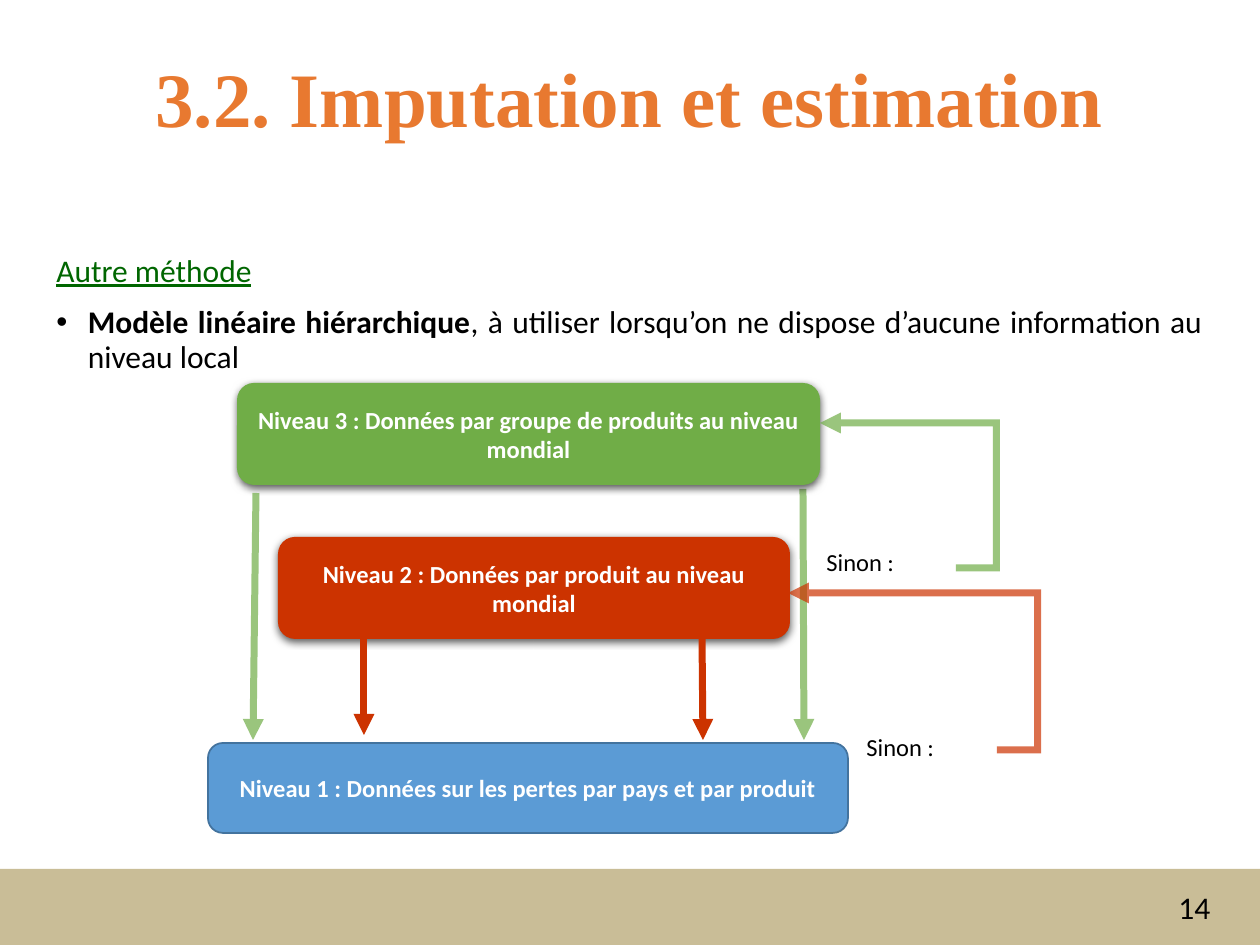
"""Build the slide on imputation with the hierarchical linear model."""
from dataclasses import dataclass
from typing import Optional

from lxml import etree
from pptx import Presentation
from pptx.dml.color import RGBColor
from pptx.enum.shapes import MSO_CONNECTOR, MSO_SHAPE
from pptx.enum.text import MSO_ANCHOR, PP_ALIGN
from pptx.oxml.ns import qn
from pptx.util import Emu, Pt

RECTANGLE, ROUNDED = MSO_SHAPE.RECTANGLE, MSO_SHAPE.ROUNDED_RECTANGLE
STRAIGHT, ELBOW = MSO_CONNECTOR.STRAIGHT, MSO_CONNECTOR.ELBOW
TOP, MIDDLE = MSO_ANCHOR.TOP, MSO_ANCHOR.MIDDLE
LEFT, CENTER, JUSTIFY = PP_ALIGN.LEFT, PP_ALIGN.CENTER, PP_ALIGN.JUSTIFY
EMU_PER_PX = 914400 / 126


@dataclass(frozen=True)
class Theme:
    heading_font: str = "Times New Roman"
    body_font: str = "Calibri"
    title_size: int = 44
    body_size: int = 18
    diagram_size: int = 14
    title: str = "E87930"
    method: str = "006600"
    ink: str = "000000"
    paper: str = "FFFFFF"
    band: str = "C9BD97"
    green: str = "70AD47"
    red: str = "CC3300"
    blue: str = "5B9BD5"
    blue_edge: str = "43739E"
    arrow_width: int = 4
    arrow_opacity: int = 70


THEME = Theme()


@dataclass(frozen=True)
class Box:
    left: int
    top: int
    width: int
    height: int


@dataclass(frozen=True)
class Level:
    box: Box
    text: str
    fill: str
    edge: Optional[str] = None


@dataclass(frozen=True)
class Arrow:
    start: tuple[int, int]
    end: tuple[int, int]
    color: str
    opacity: int = 100
    bend: Optional[float] = None


@dataclass(frozen=True)
class Label:
    box: Box
    text: str


LEVELS = (
    Level(Box(208, 743, 640, 90), "Niveau 1 : Données sur les pertes par pays et par produit",
          THEME.blue, THEME.blue_edge),
    Level(Box(237, 383, 583, 102), "Niveau 3 : Données par groupe de produits au niveau mondial",
          THEME.green),
    Level(Box(278, 537, 512, 102), "Niveau 2 : Données par produit au niveau mondial",
          THEME.red),
)
BACK_ARROW = Arrow((803, 489), (804, 740), THEME.green, THEME.arrow_opacity)
FRONT_ARROWS = (
    Arrow((364, 638), (364, 735), THEME.red),
    Arrow((702, 633), (703, 740), THEME.red),
    Arrow((256, 493), (253, 740), THEME.green, THEME.arrow_opacity),
    Arrow((956, 568), (820, 423), THEME.green, THEME.arrow_opacity, -0.297),
    Arrow((997, 750), (788, 593), THEME.red, THEME.arrow_opacity, -0.195),
)
LABELS = (
    Label(Box(814, 541, 319, 82), "Sinon :"),
    Label(Box(854, 726, 319, 82), "Sinon :"),
)


def px(length: int) -> Emu:
    return Emu(round(length * EMU_PER_PX))


def place(box: Box) -> tuple[Emu, Emu, Emu, Emu]:
    return px(box.left), px(box.top), px(box.width), px(box.height)


def add_run(paragraph, text: str, size: int, color: str, bold: bool = False,
            underline: bool = False, font: str = THEME.body_font) -> None:
    run = paragraph.add_run()
    run.text = text
    run.font.name = font
    run.font.size = Pt(size)
    run.font.bold = bold
    run.font.underline = underline
    run.font.color.rgb = RGBColor.from_string(color)


def add_text_frame(slide, box: Box, anchor=TOP):
    frame = slide.shapes.add_textbox(*place(box)).text_frame
    frame.word_wrap = True
    frame.vertical_anchor = anchor
    return frame


def add_panel(slide, kind, box: Box, fill: str, edge: Optional[str] = None):
    panel = slide.shapes.add_shape(kind, *place(box))
    panel.shadow.inherit = False
    panel.fill.solid()
    panel.fill.fore_color.rgb = RGBColor.from_string(fill)
    if edge:
        panel.line.color.rgb = RGBColor.from_string(edge)
        panel.line.width = Pt(1)
    else:
        panel.line.fill.background()
    return panel


def add_drop_shadow(panel) -> None:
    effects = panel.element.spPr.find(qn("a:effectLst"))
    shadow = etree.SubElement(effects, qn("a:outerShdw"), blurRad=str(Pt(4.5)),
                              dist=str(Pt(1.5)), dir="5400000", rotWithShape="0")
    color = etree.SubElement(shadow, qn("a:srgbClr"), val=THEME.ink)
    etree.SubElement(color, qn("a:alpha"), val="63000")


def add_level(slide, level: Level) -> None:
    panel = add_panel(slide, ROUNDED, level.box, level.fill, level.edge)
    if level.edge is None:
        add_drop_shadow(panel)
    frame = panel.text_frame
    frame.word_wrap = True
    frame.vertical_anchor = MIDDLE
    caption = frame.paragraphs[0]
    caption.alignment = CENTER
    add_run(caption, level.text, THEME.diagram_size, THEME.paper, bold=True)


def add_arrow(slide, arrow: Arrow) -> None:
    kind = STRAIGHT if arrow.bend is None else ELBOW
    connector = slide.shapes.add_connector(kind, *map(px, arrow.start + arrow.end))
    connector.line.width = Pt(THEME.arrow_width)
    connector.line.color.rgb = RGBColor.from_string(arrow.color)
    properties = connector.element.spPr
    line = properties.find(qn("a:ln"))
    if arrow.opacity < 100:
        color = line.find(f".//{qn('a:srgbClr')}")
        etree.SubElement(color, qn("a:alpha"), val=str(arrow.opacity * 1000))
    etree.SubElement(line, qn("a:miter"), lim="800000")
    etree.SubElement(line, qn("a:tailEnd"), type="triangle")
    etree.SubElement(properties, qn("a:effectLst"))
    if arrow.bend is not None:
        guides = properties.find(f".//{qn('a:avLst')}")
        etree.SubElement(guides, qn("a:gd"), name="adj1",
                         fmla=f"val {round(arrow.bend * 100000)}")


def add_label(slide, label: Label, size: int) -> None:
    paragraph = add_text_frame(slide, label.box).paragraphs[0]
    paragraph.alignment = LEFT
    add_run(paragraph, label.text, size, THEME.ink)


def add_title(slide) -> None:
    title = add_text_frame(slide, Box(44, 32, 1171, 142), MIDDLE).paragraphs[0]
    title.alignment = CENTER
    title.line_spacing = 0.9
    add_run(title, "3.2. Imputation et estimation", THEME.title_size, THEME.title,
            bold=True, font=THEME.heading_font)


def add_body(slide) -> None:
    frame = add_text_frame(slide, Box(44, 249, 1171, 600))
    method = frame.paragraphs[0]
    method.line_spacing = 0.9
    add_run(method, "Autre méthode", THEME.body_size, THEME.method, underline=True)
    model = frame.add_paragraph()
    model.alignment = JUSTIFY
    model.line_spacing = 0.9
    model.space_before = Pt(10)
    indent = model._p.get_or_add_pPr()
    indent.set("marL", str(Pt(18)))
    indent.set("indent", str(-Pt(18)))
    etree.SubElement(indent, qn("a:buFont"), typeface="Arial")
    etree.SubElement(indent, qn("a:buChar"), char="•")
    add_run(model, "Modèle linéaire hiérarchique", THEME.body_size, THEME.ink, bold=True)
    add_run(model, ", à utiliser lorsqu’on ne dispose d’aucune information au niveau local",
            THEME.body_size, THEME.ink)


def main() -> None:
    deck = Presentation()
    deck.slide_width, deck.slide_height = px(1260), px(945)
    slide = deck.slides.add_slide(deck.slide_layouts[6])
    add_panel(slide, RECTANGLE, Box(0, 869, 1260, 76), THEME.band)
    add_label(slide, Label(Box(1166, 882, 87, 50), "14"), THEME.body_size)
    add_title(slide)
    add_body(slide)
    add_arrow(slide, BACK_ARROW)
    for level in LEVELS:
        add_level(slide, level)
    for label in LABELS:
        add_label(slide, label, THEME.diagram_size)
    for arrow in FRONT_ARROWS:
        add_arrow(slide, arrow)
    deck.save("out.pptx")


if __name__ == "__main__":
    main()
